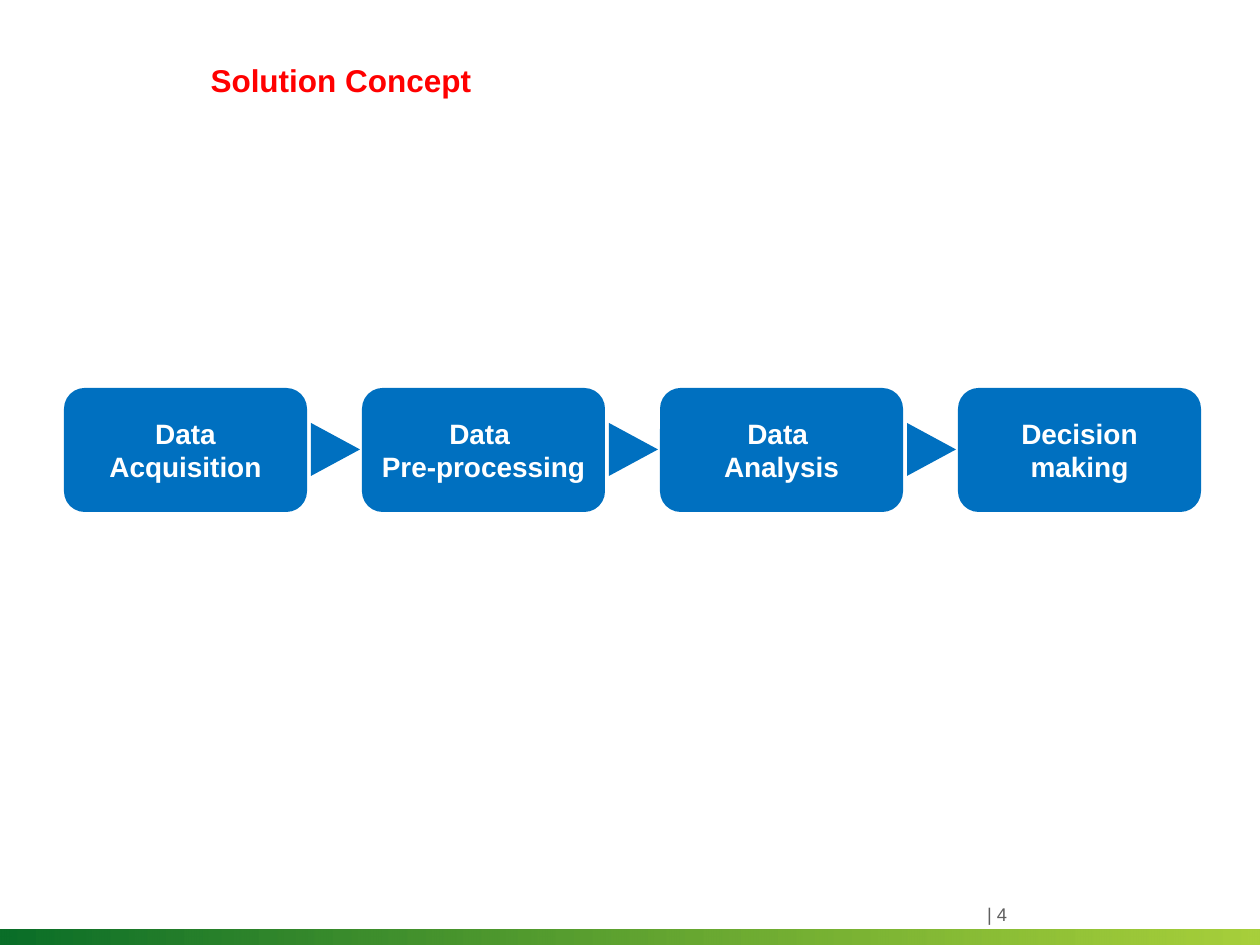
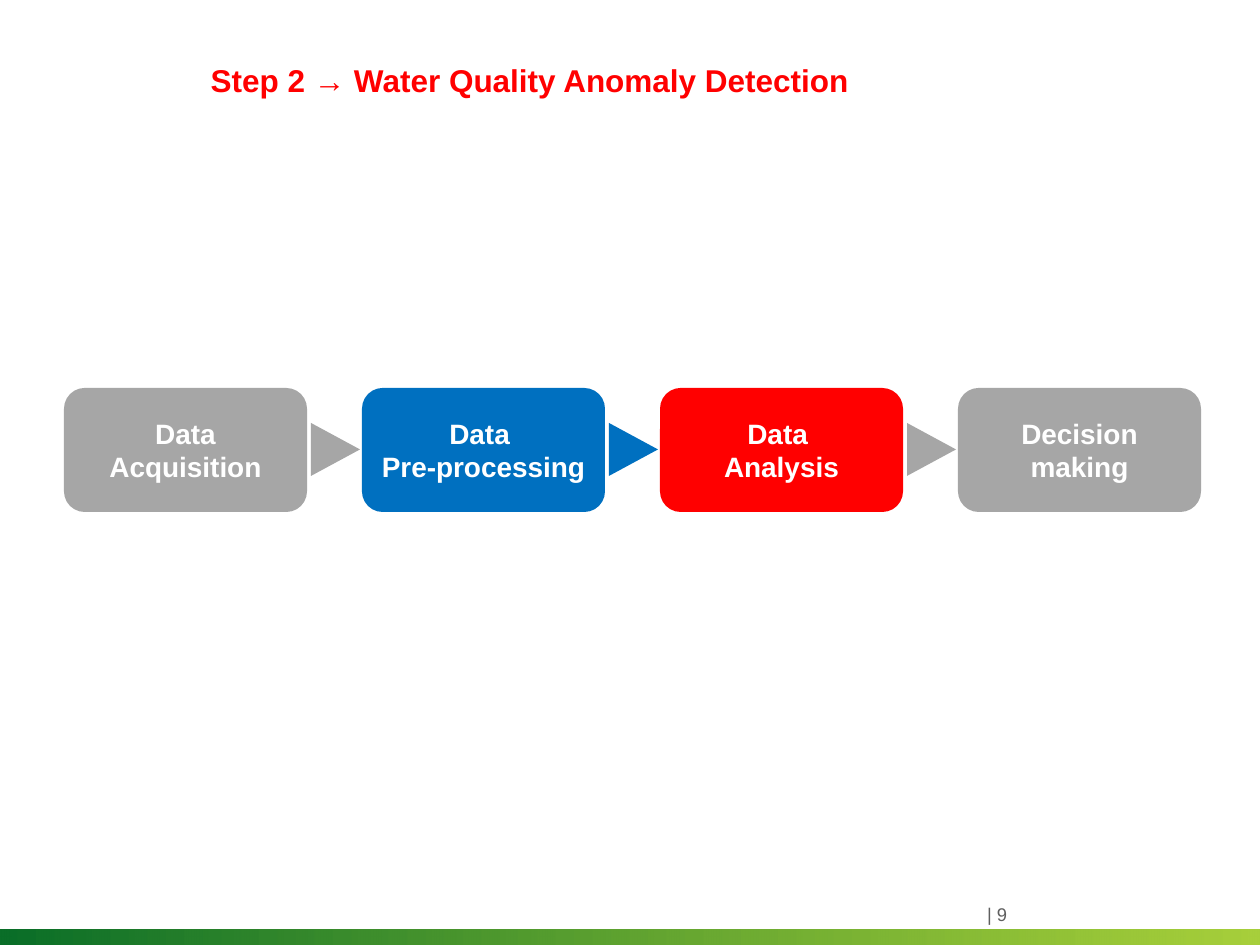
from dataclasses import dataclass

import pptx
import pptx.dml.color
import pptx.enum.shapes
import pptx.enum.text
import pptx.oxml
import pptx.oxml.ns
import pptx.shapes.autoshape
import pptx.slide
import pptx.util
from lxml import etree

MSO_SHAPE = pptx.enum.shapes.MSO_SHAPE
PP_ALIGN = pptx.enum.text.PP_ALIGN
MSO_ANCHOR = pptx.enum.text.MSO_ANCHOR
MSO_AUTO_SIZE = pptx.enum.text.MSO_AUTO_SIZE

PX_PER_INCH = 126
SLIDE_W, SLIDE_H = 1260, 945
FONT = "Arial"
BLUE, RED, GREY, WHITE = "0070C0", "FF0000", "A6A6A6", "FFFFFF"
BAND_START, BAND_END, NUMBER_GREY = "0A6E28", "91C30A", "5F5F5F"

STEP_X, STEP_Y, STEP_W, STEP_H, STEP_PITCH = 64, 388, 243, 124, 298
ARROW_W, ARROW_H, ARROW_GAP = 53, 49, 2
STEP_LABELS = (
    "Data Acquisition",
    "Data \nPre-processing ",
    "Data \nAnalysis",
    "Decision making",
)


@dataclass(frozen=True)
class ProcessSlide:
    title: str
    number: int
    step_colours: tuple[str, ...]
    arrow_colours: tuple[str, ...]


SLIDES = (
    ProcessSlide("Solution Concept", 4, (BLUE,) * 4, (BLUE,) * 3),
    ProcessSlide(
        "Step 2 → Water Quality Anomaly Detection",
        9,
        (GREY, BLUE, RED, GREY),
        (GREY, BLUE, GREY),
    ),
)


def px(n: int) -> pptx.util.Emu:
    return pptx.util.Emu(round(n * 914400 / PX_PER_INCH))


def rgb(colour: str) -> pptx.dml.color.RGBColor:
    return pptx.dml.color.RGBColor.from_string(colour)


def write(
    tf: pptx.text.text.TextFrame,
    text: str,
    size: float,
    colour: str,
    bold: bool = False,
    align: PP_ALIGN = PP_ALIGN.LEFT,
) -> None:
    tf.text = text
    tf.word_wrap = True
    tf.vertical_anchor = MSO_ANCHOR.MIDDLE
    for p in tf.paragraphs:
        p.alignment = align
        for r in p.runs:
            r.font.name = FONT
            r.font.size = pptx.util.Pt(size)
            r.font.bold = bold
            r.font.color.rgb = rgb(colour)


def add_block(
    s: pptx.slide.Slide, kind: MSO_SHAPE, x: int, y: int, w: int, h: int, colour: str
) -> pptx.shapes.autoshape.Shape:
    sp = s.shapes.add_shape(kind, px(x), px(y), px(w), px(h))
    sp.shadow.inherit = False
    sp.line.fill.background()
    sp.fill.solid()
    sp.fill.fore_color.rgb = rgb(colour)
    return sp


def add_band(s: pptx.slide.Slide) -> None:
    band = add_block(s, MSO_SHAPE.RECTANGLE, 0, 930, SLIDE_W, 15, BAND_START)
    band.fill.gradient()
    band.fill.gradient_angle = 0
    for stop, colour in zip(band.fill.gradient_stops, (BAND_START, BAND_END)):
        stop.color.rgb = rgb(colour)
    end = band.element.spPr.findall(".//" + pptx.oxml.ns.qn("a:srgbClr"))[-1]
    etree.SubElement(end, pptx.oxml.ns.qn("a:alpha"), val="80000")


def add_number(s: pptx.slide.Slide, number: int) -> None:
    sp = s.shapes.add_textbox(px(987), px(903), px(118), px(23))
    tf = sp.text_frame
    tf.margin_left = tf.margin_right = tf.margin_top = tf.margin_bottom = 0
    write(tf, f"| {number}", 10.5, NUMBER_GREY)


def set_title(s: pptx.slide.Slide, text: str) -> None:
    sp = s.shapes.title
    sp.left, sp.top, sp.width, sp.height = px(198), px(30), px(893), px(100)
    tf = sp.text_frame
    write(tf, text, 18, RED, bold=True)
    tf.auto_size = MSO_AUTO_SIZE.NONE
    tf.paragraphs[0].space_after = pptx.util.Pt(4)


def add_steps(s: pptx.slide.Slide, colours: tuple[str, ...]) -> None:
    for i, (label, colour) in enumerate(zip(STEP_LABELS, colours)):
        x = STEP_X + i * STEP_PITCH
        sp = add_block(
            s, MSO_SHAPE.ROUNDED_RECTANGLE, x, STEP_Y, STEP_W, STEP_H, colour
        )
        write(sp.text_frame, label, 16, WHITE, bold=True, align=PP_ALIGN.CENTER)


def add_arrows(s: pptx.slide.Slide, colours: tuple[str, ...]) -> None:
    y = STEP_Y + (STEP_H - ARROW_H) // 2
    for i, colour in enumerate(colours):
        x = STEP_X + i * STEP_PITCH + STEP_W + ARROW_GAP
        sp = add_block(
            s, MSO_SHAPE.ISOSCELES_TRIANGLE, x, y, ARROW_W, ARROW_H, colour
        )
        sp.rotation = 90


def add_process_slide(prs: pptx.presentation.Presentation, page: ProcessSlide) -> None:
    s = prs.slides.add_slide(prs.slide_layouts[5])
    add_band(s)
    add_number(s, page.number)
    set_title(s, page.title)
    add_steps(s, page.step_colours)
    add_arrows(s, page.arrow_colours)


def main() -> None:
    prs = pptx.Presentation()
    prs.slide_width, prs.slide_height = px(SLIDE_W), px(SLIDE_H)
    for page in SLIDES:
        add_process_slide(prs, page)
    prs.save("out.pptx")


if __name__ == "__main__":
    main()
